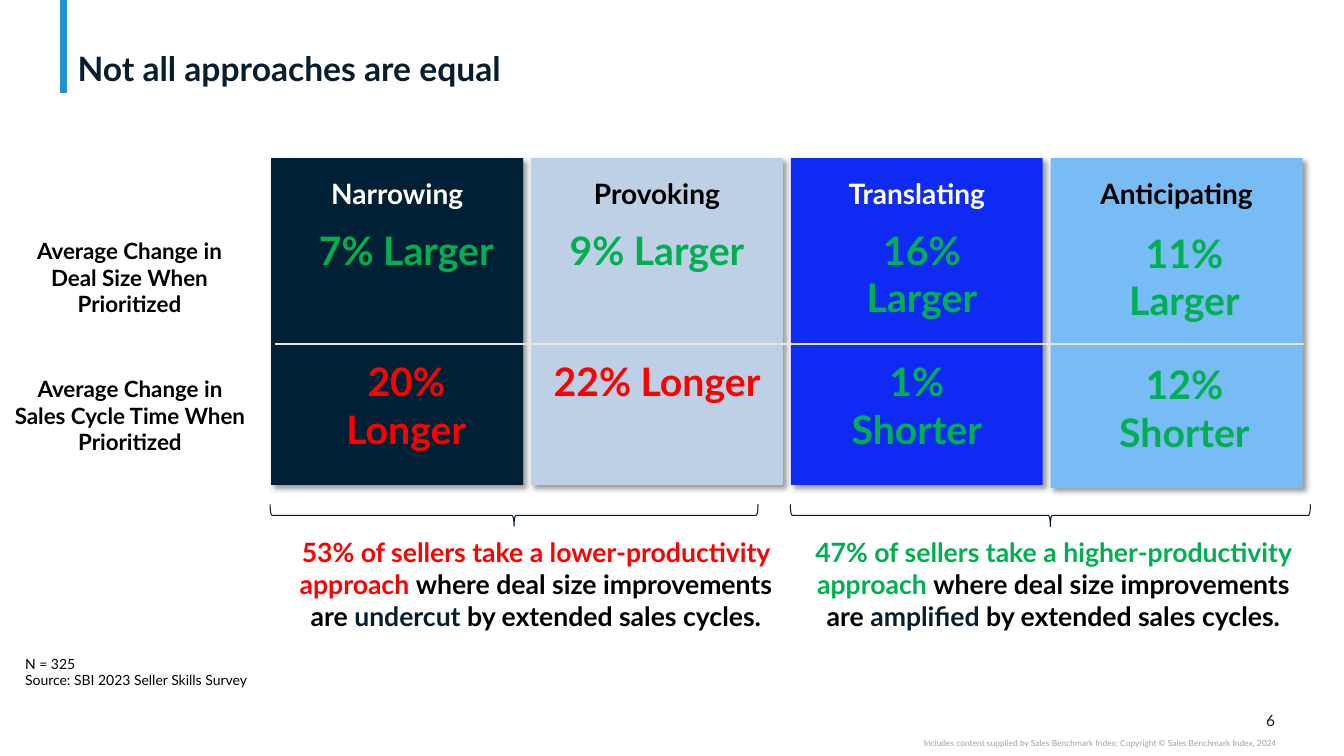
from dataclasses import dataclass

from lxml import etree
from pptx import Presentation
from pptx.dml.color import RGBColor
from pptx.enum.shapes import MSO_CONNECTOR, MSO_SHAPE
from pptx.enum.text import MSO_ANCHOR, PP_ALIGN
from pptx.oxml.ns import qn
from pptx.util import Emu, Inches, Pt

LEFT, CENTER, RIGHT = PP_ALIGN.LEFT, PP_ALIGN.CENTER, PP_ALIGN.RIGHT
TOP, MIDDLE, BOTTOM = MSO_ANCHOR.TOP, MSO_ANCHOR.MIDDLE, MSO_ANCHOR.BOTTOM
RECTANGLE, LEFT_BRACE = MSO_SHAPE.RECTANGLE, MSO_SHAPE.LEFT_BRACE
STRAIGHT = MSO_CONNECTOR.STRAIGHT

FONT = "Lato"
COLORS = {
    "black": "000000", "white": "FFFFFF", "ink": "071E31", "brace": "061D31",
    "accent": "2391CF", "gray": "A0A0A0", "divider": "E7E6E6",
    "red": "FF0000", "green": "00B050", "navy": "002036",
    "pale": "BED0E5", "blue": "0F2AF2", "sky": "77BCF4",
}
SLIDE_WIDTH, SLIDE_HEIGHT = Inches(13.33), Inches(7.5)

# Card grid, in percent of the slide's width and height
GRID_LEFT, COLUMN_PITCH, CARD_WIDTH = 20.18, 19.33, 18.75
CARD_TOP, CARD_HEIGHT = 20.93, 43.2
VALUE_ROWS, VALUE_HEIGHT = (29.27, 46.67), 13.87

DEFAULT_INSETS = (0.1, 0.05, 0.1, 0.05)
NO_INSETS = (0, 0, 0, 0)


@dataclass
class Box:
    """Left, top, width and height in percent of the slide."""
    left: float
    top: float
    width: float
    height: float

    def lengths(self) -> tuple[Emu, Emu, Emu, Emu]:
        return (across(self.left), down(self.top),
                across(self.width), down(self.height))


@dataclass
class Run:
    text: str
    color: str = "black"


@dataclass
class Label:
    box: Box
    paragraphs: list[list[Run]]
    size: float
    bold: bool = False
    align: PP_ALIGN = LEFT
    anchor: MSO_ANCHOR = TOP
    insets: tuple = DEFAULT_INSETS
    line_spacing: float | None = None


@dataclass
class Value:
    run: Run
    offset: float  # shares of the column pitch
    width: float


@dataclass
class Card:
    heading: Run
    fill: str
    values: tuple[Value, Value]
    drop: float = 0


CARDS = [
    Card(Run("Narrowing", "white"), "navy",
         (Value(Run("7% Larger", "green"), 0.12, 0.8),
          Value(Run("20% Longer", "red"), 0.14, 0.76))),
    Card(Run("Provoking"), "pale",
         (Value(Run("9% Larger", "green"), 0.09, 0.79),
          Value(Run("22% Longer", "red"), 0.04, 0.89))),
    Card(Run("Translating", "white"), "blue",
         (Value(Run("16% Larger", "green"), 0.14, 0.73),
          Value(Run("1% Shorter", "green"), 0.12, 0.73))),
    Card(Run("Anticipating"), "sky",
         (Value(Run("11% Larger", "green"), 0.14, 0.75),
          Value(Run("12% Shorter", "green"), 0.14, 0.75)), drop=0.4),
]


def summary(box: Box, claim: str, color: str, effect: str) -> Label:
    runs = [Run(claim, color), Run("where deal size improvements are "),
            Run(effect, "ink"), Run(" by extended sales cycles.")]
    return Label(box, [runs], 19, True, CENTER)


LABELS = [
    Label(Box(5.03, 0.53, 89.93, 11.2), [[Run("Not all approaches are equal", "ink")]],
          24, True, anchor=BOTTOM, insets=(0.1, 0, 0.1, 0), line_spacing=0.9),
    Label(Box(0.75, 30.67, 17.78, 12.13),
          [[Run("Average Change in Deal Size When Prioritized")]], 16, True, CENTER),
    Label(Box(0, 48.93, 19.35, 15.73),
          [[Run("Average Change in Sales Cycle Time When Prioritized")]], 16, True, CENTER),
    summary(Box(20.18, 70.27, 39.38, 18.4),
            "53% of sellers take a lower-productivity approach ", "red", "undercut"),
    summary(Box(59.78, 70.27, 37.2, 18.4),
            "47% of sellers take a higher-productivity approach ", "green", "amplified"),
    Label(Box(1.13, 86, 19.05, 5.87),
          [[Run("N = 325")], [Run("Source: SBI 2023 Seller Skills Survey")]], 10),
    Label(Box(92.4, 94, 2.48, 2.53), [[Run("6", "ink")]], 11,
          align=RIGHT, anchor=MIDDLE, insets=NO_INSETS),
    Label(Box(56.25, 97.6, 38.7, 1.33),
          [[Run("Includes content supplied by Sales Benchmark Index; "
                "Copyright © Sales Benchmark Index, 2024", "gray")]],
          6, align=RIGHT, insets=NO_INSETS),
]

BRACES = [Box(20.1, 66.7, 36.3, 2.93), Box(58.8, 66.7, 38.7, 2.93)]


def across(percent: float) -> Emu:
    return Emu(round(SLIDE_WIDTH * percent / 100))


def down(percent: float) -> Emu:
    return Emu(round(SLIDE_HEIGHT * percent / 100))


def rgb(name: str) -> RGBColor:
    return RGBColor.from_string(COLORS[name])


def add_run(paragraph, run: Run, size: float, bold: bool) -> None:
    text_run = paragraph.add_run()
    text_run.text = run.text
    font = text_run.font
    font.name, font.size, font.bold = FONT, Pt(size), bold
    font.color.rgb = rgb(run.color)


def set_frame(frame, insets: tuple, anchor: MSO_ANCHOR) -> None:
    frame.word_wrap = True
    frame.vertical_anchor = anchor
    (frame.margin_left, frame.margin_top,
     frame.margin_right, frame.margin_bottom) = map(Inches, insets)


def add_label(slide, label: Label) -> None:
    frame = slide.shapes.add_textbox(*label.box.lengths()).text_frame
    set_frame(frame, label.insets, label.anchor)
    for index, runs in enumerate(label.paragraphs):
        paragraph = frame.add_paragraph() if index else frame.paragraphs[0]
        paragraph.alignment = label.align
        if label.line_spacing:
            paragraph.line_spacing = label.line_spacing
        for run in runs:
            add_run(paragraph, run, label.size, label.bold)


def add_card_shadow(shape) -> None:
    shape.shadow.inherit = False
    effects = shape._element.spPr.find(qn("a:effectLst"))
    shadow = etree.SubElement(effects, qn("a:outerShdw"), blurRad=str(Pt(4)),
                              dist=str(Pt(3)), dir="2700000", algn="tl", rotWithShape="0")
    color = etree.SubElement(shadow, qn("a:srgbClr"), val=COLORS["black"])
    etree.SubElement(color, qn("a:alpha"), val="40000")


def add_card(slide, card: Card, left: float) -> None:
    box = Box(left, CARD_TOP, CARD_WIDTH, CARD_HEIGHT + card.drop)
    shape = slide.shapes.add_shape(RECTANGLE, *box.lengths())
    shape.fill.solid()
    shape.fill.fore_color.rgb = rgb(card.fill)
    shape.line.fill.background()
    add_card_shadow(shape)
    set_frame(shape.text_frame, (0.3, 0.18, 0.3, 0.05), TOP)
    paragraph = shape.text_frame.paragraphs[0]
    paragraph.alignment = CENTER
    add_run(paragraph, card.heading, 20, True)
    for value, top in zip(card.values, VALUE_ROWS):
        box = Box(left + value.offset * COLUMN_PITCH, top + card.drop,
                  value.width * COLUMN_PITCH, VALUE_HEIGHT)
        add_label(slide, Label(box, [[value.run]], 28, True, CENTER))


def add_brace(slide, box: Box) -> None:
    left, top, width, height = box.lengths()
    shift = (width - height) // 2
    shape = slide.shapes.add_shape(LEFT_BRACE, left + shift, top - shift, height, width)
    shape.rotation = 270
    shape.shadow.inherit = False
    shape.fill.background()
    shape.line.color.rgb, shape.line.width = rgb("brace"), Pt(0.75)


def add_line(slide, start: tuple, end: tuple, color: str, width: float) -> None:
    line = slide.shapes.add_connector(STRAIGHT, across(start[0]), down(start[1]),
                                      across(end[0]), down(end[1]))
    line.line.color.rgb, line.line.width = rgb(color), Pt(width)
    etree.SubElement(line._element.spPr, qn("a:effectLst"))


def main() -> None:
    presentation = Presentation()
    presentation.slide_width, presentation.slide_height = SLIDE_WIDTH, SLIDE_HEIGHT
    slide = presentation.slides.add_slide(presentation.slide_layouts[6])
    # Title accent
    add_line(slide, (4.73, 0), (4.73, 12.27), "accent", 5)
    # Approach cards with their values
    for column, card in enumerate(CARDS):
        add_card(slide, card, GRID_LEFT + column * COLUMN_PITCH)
    add_line(slide, (20.48, 45.47), (97, 45.47), "divider", 1.5)
    # Braces, title, row labels, summaries and footer
    for brace in BRACES:
        add_brace(slide, brace)
    for label in LABELS:
        add_label(slide, label)
    presentation.save("out.pptx")


if __name__ == "__main__":
    main()
